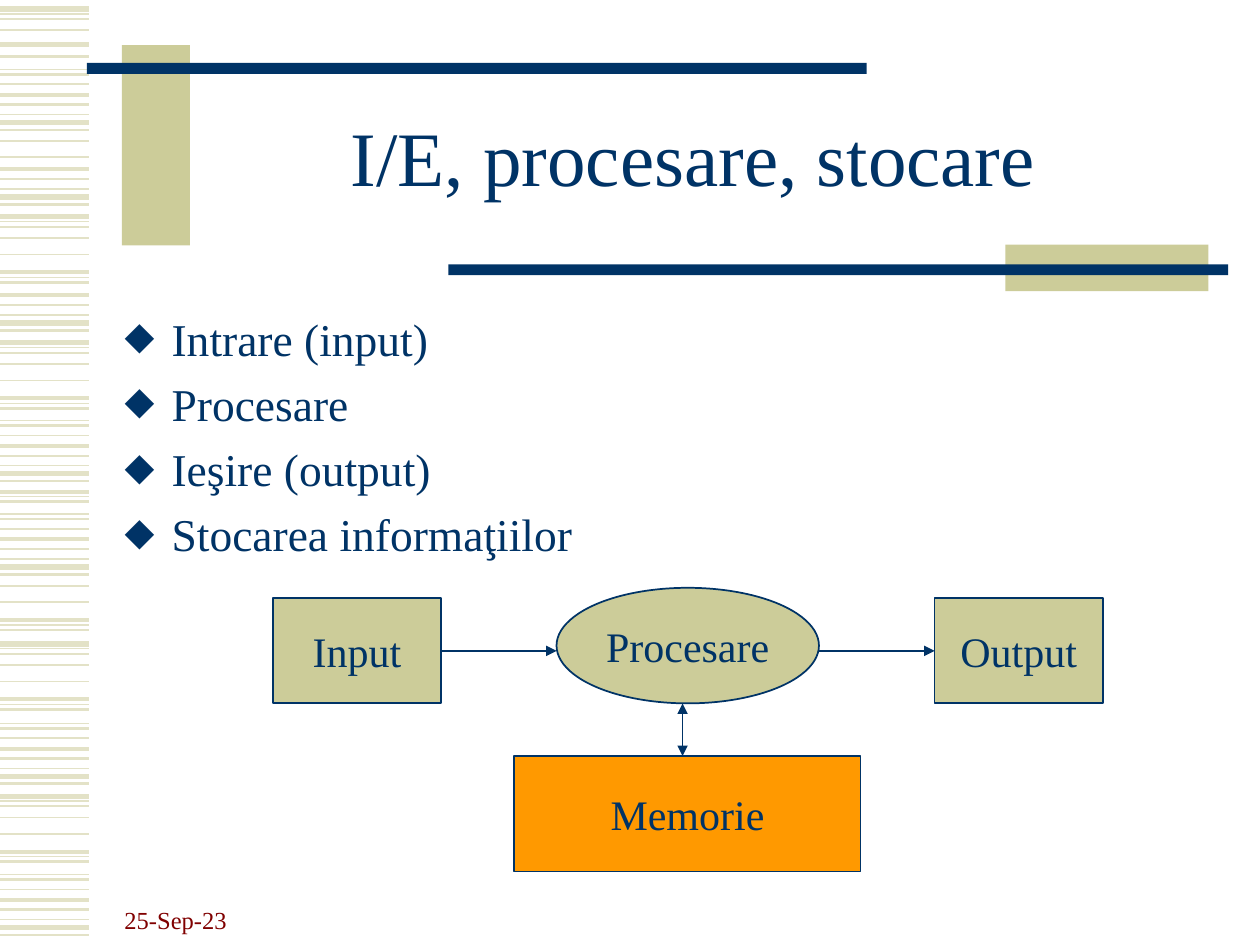
from lxml import etree
from pptx import Presentation
from pptx.dml.color import RGBColor
from pptx.enum.shapes import MSO_CONNECTOR, MSO_SHAPE
from pptx.enum.text import MSO_ANCHOR, PP_ALIGN
from pptx.oxml.ns import qn
from pptx.util import Cm, Pt

RECT, OVAL = MSO_SHAPE.RECTANGLE, MSO_SHAPE.OVAL
LINE = MSO_CONNECTOR.STRAIGHT
TOP, MID, LOW = MSO_ANCHOR.TOP, MSO_ANCHOR.MIDDLE, MSO_ANCHOR.BOTTOM
LEFT, MIDST = PP_ALIGN.LEFT, PP_ALIGN.CENTER

FONT = "Times New Roman"
NAVY, SAND, PALE = "003366", "CCCC99", "E3E2C7"
AMBER, WINE = "FF9900", "800000"

# Two stripe motifs: (offset in cm, weight in points)
BAND_A = [(0, 3), (0.1, 0.75), (0.2, 1), (0.43, 1),
          (0.76, 1), (1.12, 2.25), (1.22, 0.75), (1.32, 1.5)]
BAND_B = [(0, 0.75), (0.1, 1.5), (0.3, 1), (0.51, 2.25),
          (0.71, 1.5), (0.91, 0.75), (1.07, 3), (1.22, 1.5)]
# Whole or partial motifs and the height each starts from
BANDS = [
    (BAND_A[:4], 0.18), ([(0, 3), (0.25, 1.5)], 0.89),
    (BAND_B, 1.4), (BAND_A[3:5], 2.41), (BAND_B[3:], 2.9),
    (BAND_A, 4.37), (BAND_B[3:], 5.44),
    (BAND_A, 6.91), (BAND_B, 8.48),
    (BAND_A[5:], 8.79), (BAND_B, 10.36), (BAND_A[3:], 11.38),
    (BAND_A, 12.98), (BAND_B, 14.58),
    (BAND_A, 16.05), (BAND_B, 17.63),
]


def tint(code):
    return RGBColor.from_string(code)


def add_mark(para):
    """Give a paragraph a hanging diamond bullet."""
    props = para._p.get_or_add_pPr()
    props.set("marL", str(Cm(0.95)))
    props.set("indent", str(-Cm(0.95)))
    color = etree.SubElement(props, qn("a:buClr"))
    etree.SubElement(color, qn("a:srgbClr"), val=NAVY)
    etree.SubElement(props, qn("a:buFont"), typeface=FONT)
    etree.SubElement(props, qn("a:buChar"), char="⬥")


def write(shape, *lines, size=24, color=NAVY, align=LEFT, anchor=TOP,
          wrap=True, lead=None, gap=None, mark=False):
    frame = shape.text_frame
    frame.word_wrap = wrap
    frame.vertical_anchor = anchor
    for i, line in enumerate(lines):
        para = frame.add_paragraph() if i else frame.paragraphs[0]
        para.alignment = align
        if lead:
            para.line_spacing = lead
        if gap:
            para.space_before = Pt(gap)
        if mark:
            add_mark(para)
        run = para.add_run()
        run.text = line
        run.font.name = FONT
        run.font.size = Pt(size)
        run.font.color.rgb = tint(color)


def add_text(slide, box, *lines, **style):
    write(slide.shapes.add_textbox(*map(Cm, box)), *lines, **style)


def add_block(slide, box, fill, kind=RECT, edge=None):
    shape = slide.shapes.add_shape(kind, *map(Cm, box))
    shape.shadow.inherit = False
    shape.fill.solid()
    shape.fill.fore_color.rgb = tint(fill)
    if edge:
        shape.line.color.rgb = tint(edge)
        shape.line.width = Pt(1)
    else:
        shape.line.fill.background()
    return shape


def add_node(slide, text, box, fill=SAND, kind=RECT):
    shape = add_block(slide, box, fill, kind, edge=NAVY)
    write(shape, text, align=MIDST, anchor=MID, wrap=False)


def add_line(slide, ends, color=NAVY, width=1, tips=()):
    line = slide.shapes.add_connector(LINE, *map(Cm, ends))
    line.line.color.rgb = tint(color)
    line.line.width = Pt(width)
    for tip in tips:
        etree.SubElement(line.line._ln, qn("a:" + tip), type="triangle")
    etree.SubElement(line._element.spPr, qn("a:effectLst"))


def add_decor(slide):
    # Striped left margin
    for band, start in BANDS:
        for step, width in band:
            y = start + step
            add_line(slide, (0, y, 1.8, y), PALE, width)
    # Bars around the title
    add_block(slide, (2.46, 0.91, 1.37, 4.04), SAND)
    add_block(slide, (1.75, 1.27, 15.72, 0.22), NAVY)
    add_block(slide, (20.27, 4.93, 4.09, 0.94), SAND)
    add_block(slide, (9.04, 5.33, 15.72, 0.22), NAVY)


def add_flow(slide):
    add_node(slide, "Input", (5.5, 12.06, 3.39, 2.12))
    add_node(slide, "Procesare", (11.22, 11.85, 5.29, 2.33), kind=OVAL)
    add_node(slide, "Output", (18.84, 12.06, 3.39, 2.12))
    add_node(slide, "Memorie", (10.37, 15.24, 6.98, 2.33), AMBER)
    for x in (8.89, 16.51):
        add_line(slide, (x, 13.12, x + 2.33, 13.12), tips=["tailEnd"])
    add_line(slide, (13.76, 14.18, 13.76, 15.24),
             tips=["headEnd", "tailEnd"])


def main():
    deck = Presentation()
    deck.slide_width, deck.slide_height = Cm(25.4), Cm(19.05)
    slide = deck.slides.add_slide(deck.slide_layouts[6])
    add_decor(slide)
    # Date, title and list
    add_text(slide, (2.26, 17.7, 5.28, 1.27), "25-Sep-23",
             size=14, color=WINE, anchor=LOW)
    add_text(slide, (3.81, 1.7, 20.5, 3.17), "I/E, procesare, stocare\t",
             size=44, align=MIDST, anchor=MID, lead=0.85)
    add_text(slide, (2.26, 6.15, 22.1, 10.77), "Intrare (input)",
             "Procesare", "Ieşire (output)", "Stocarea informaţiilor",
             size=26, gap=6, mark=True)
    add_flow(slide)
    deck.save("out.pptx")


if __name__ == "__main__":
    main()
